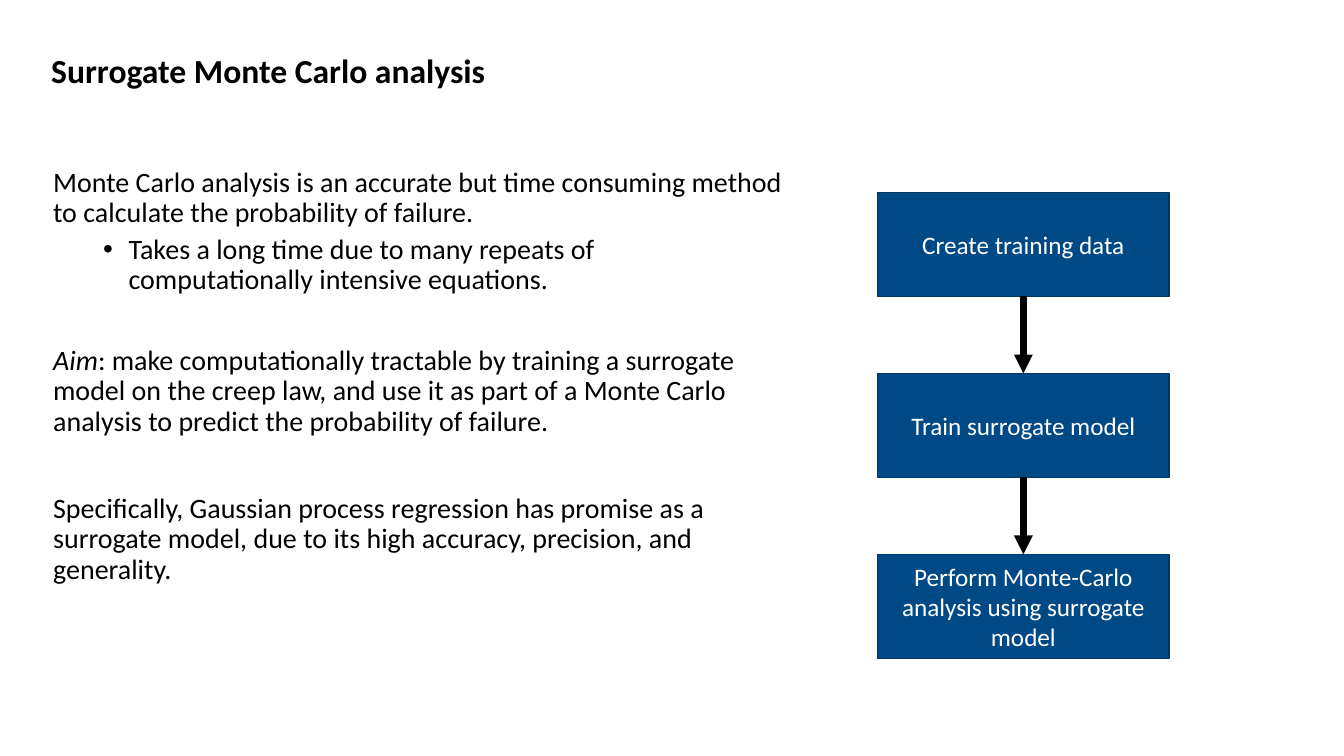
from dataclasses import dataclass
from itertools import pairwise

from lxml import etree
from pptx import Presentation
from pptx import util as u
from pptx.dml.color import RGBColor
from pptx.enum import shapes, text
from pptx.oxml import ns


@dataclass(frozen=True)
class Theme:
    font: str = "Calibri"
    ink: str = "000000"
    fill: str = "004987"
    edge: str = "003664"
    light: str = "FFFFFF"
    head: int = 24
    body: int = 20
    step: int = 18


THEME = Theme()
TITLE = "Surrogate Monte Carlo analysis"
NOTES = [
    ("", "Monte Carlo analysis is an accurate but time consuming method "
     "to calculate the probability of failure.", 0, False),
    ("", "Takes a long time due to many repeats of computationally "
     "intensive equations.", 5, True),
    ("Aim", ": make computationally tractable by training a surrogate model "
     "on the creep law, and use it as part of a Monte Carlo analysis to "
     "predict the probability of failure.", 36, False),
    ("", "Specifically, Gaussian process regression has promise as a "
     "surrogate model, due to its high accuracy, precision, and "
     "generality.", 41, False),
]
STEPS = [
    "Create training data",
    "Train surrogate model",
    "Perform Monte-Carlo analysis using surrogate model",
]


def tint(name):
    return RGBColor.from_string(name)


def style(font, size, color):
    font.name = THEME.font
    font.size = u.Pt(size)
    font.color.rgb = tint(color)


def add_node(parent, tag, **attrs):
    return etree.SubElement(parent, ns.qn(tag), **attrs)


def add_frame(slide, box):
    frame = slide.shapes.add_textbox(*map(u.Cm, box)).text_frame
    frame.word_wrap = True
    return frame


def add_title(slide, box):
    frame = add_frame(slide, box)
    frame.text = TITLE
    para = frame.paragraphs[0]
    para.line_spacing = 0.9
    style(para.runs[0].font, THEME.head, THEME.ink)
    para.runs[0].font.bold = True


def add_bullet(para):
    props = para._p.get_or_add_pPr()
    props.set("marL", str(u.Cm(1.9)))
    props.set("indent", str(-u.Cm(0.64)))
    add_node(props, "a:buFont", typeface="Arial")
    add_node(props, "a:buChar", char="•")


def add_notes(slide, box):
    frame = add_frame(slide, box)
    for i, (lead, words, gap, dot) in enumerate(NOTES):
        para = frame.add_paragraph() if i else frame.paragraphs[0]
        if dot:
            add_bullet(para)
        para.line_spacing = 0.9
        para.space_before = u.Pt(gap)
        for part in filter(None, (lead, words)):
            run = para.add_run()
            run.text = part
            style(run.font, THEME.body, THEME.ink)
            run.font.italic = part == lead


def add_step(slide, words, box):
    step = slide.shapes.add_shape(
        shapes.MSO_SHAPE.RECTANGLE, *map(u.Cm, box))
    step.shadow.inherit = False
    step.fill.solid()
    step.fill.fore_color.rgb = tint(THEME.fill)
    step.line.color.rgb = tint(THEME.edge)
    step.line.width = u.Pt(1)
    frame = step.text_frame
    frame.word_wrap = True
    frame.vertical_anchor = text.MSO_ANCHOR.MIDDLE
    frame.text = words
    para = frame.paragraphs[0]
    para.alignment = text.PP_ALIGN.CENTER
    style(para.runs[0].font, THEME.step, THEME.light)
    return step


def add_arrow(slide, start, end):
    arrow = slide.shapes.add_connector(
        shapes.MSO_CONNECTOR.STRAIGHT, 0, 0, 0, 0)
    arrow.begin_connect(start, 2)
    arrow.end_connect(end, 0)
    arrow.line.color.rgb = tint(THEME.ink)
    arrow.line.width = u.Pt(4.5)
    add_node(arrow.line._get_or_add_ln(), "a:tailEnd", type="triangle")
    add_node(arrow._element.spPr, "a:effectLst")


def add_flow(slide, box):
    left, top, width, height = box
    tall = 2.62
    pitch = (height - tall) / (len(STEPS) - 1)
    steps = [add_step(slide, words, (left, top + i * pitch, width, tall))
             for i, words in enumerate(STEPS)]
    for start, end in pairwise(steps):
        add_arrow(slide, start, end)


def main():
    deck = Presentation()
    deck.slide_width = u.Cm(33.87)
    deck.slide_height = u.Cm(19.05)
    slide = deck.slides.add_slide(deck.slide_layouts[6])
    add_title(slide, (1.04, 1.24, 18.92, 1.09))
    add_notes(slide, (1.09, 4.11, 18.92, 12.19))
    add_flow(slide, (22.12, 4.85, 7.34, 11.74))
    deck.save("out.pptx")


if __name__ == "__main__":
    main()
